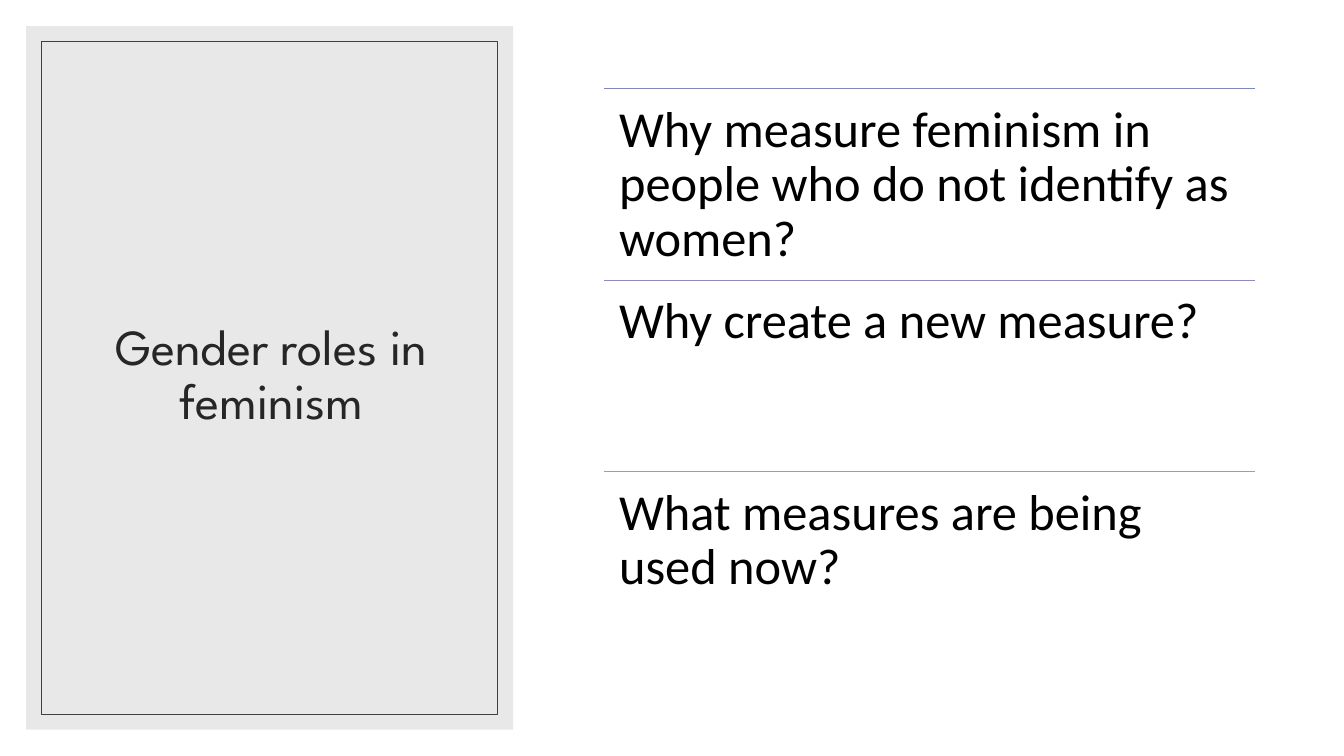
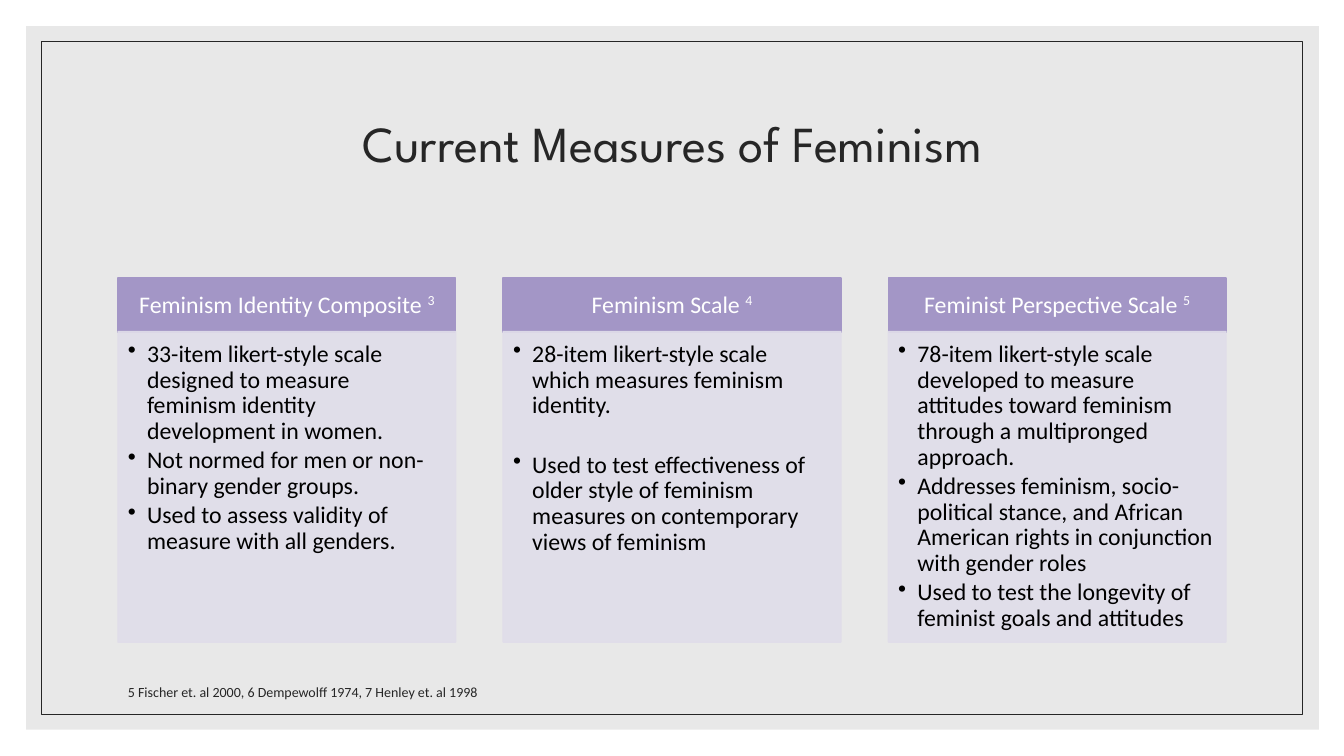
from dataclasses import dataclass

from lxml import etree
from pptx import Presentation
from pptx.dml.color import RGBColor
from pptx.enum.shapes import MSO_CONNECTOR, MSO_SHAPE
from pptx.enum.text import MSO_ANCHOR, MSO_AUTO_SIZE, PP_ALIGN
from pptx.oxml.ns import qn
from pptx.util import Inches, Pt

RECTANGLE = MSO_SHAPE.RECTANGLE
STRAIGHT = MSO_CONNECTOR.STRAIGHT
LEFT, CENTER = PP_ALIGN.LEFT, PP_ALIGN.CENTER
TOP, MIDDLE, BOTTOM = MSO_ANCHOR.TOP, MSO_ANCHOR.MIDDLE, MSO_ANCHOR.BOTTOM
NO_AUTOFIT = MSO_AUTO_SIZE.NONE
TITLE_ONLY = 5


@dataclass(frozen=True)
class Theme:
    heading_font: str = "League Spartan"
    body_font: str = "Calibri"
    ink: str = "262626"
    soft_ink: str = "404040"
    black: str = "000000"
    white: str = "FFFFFF"
    panel: str = "D9D9D9"
    accent: str = "A396C6"
    tint: str = "E0DDEA"
    rules: tuple = ("7F88BA", "8E8BC0", "A396C6")
    large: int = 36
    medium: int = 17
    small: int = 10


THEME = Theme()


def write_text(frame, paragraphs, *, size, color, font=THEME.body_font, align=LEFT,
               anchor=TOP, insets=(0.1, 0.05, 0.1, 0.05), spacing=0.9, before=0,
               after=0, bullet=None, superscript=None):
    frame.word_wrap = True
    frame.auto_size = NO_AUTOFIT
    frame.vertical_anchor = anchor
    (frame.margin_left, frame.margin_top,
     frame.margin_right, frame.margin_bottom) = map(Inches, insets)
    for index, text in enumerate(paragraphs):
        paragraph = frame.add_paragraph() if index else frame.paragraphs[0]
        paragraph.alignment = align
        paragraph.line_spacing = spacing
        paragraph.space_before = Pt(before if index else 0)
        paragraph.space_after = Pt(after)
        if bullet:
            properties = paragraph._p.get_or_add_pPr()
            properties.set("marL", str(Inches(0.19)))
            properties.set("indent", str(-Inches(0.19)))
            etree.SubElement(properties, qn("a:buChar"), char=bullet)
        for part in filter(None, (text, superscript)):
            run = paragraph.add_run()
            run.text = part
            run.font.name = font
            run.font.size = Pt(size)
            run.font.color.rgb = RGBColor.from_string(color)
        if superscript:
            run._r.get_or_add_rPr().set("baseline", "30000")


class Deck:
    """Holds the style and the current slide, and draws each kind of element."""

    def __init__(self, theme):
        self.theme = theme
        self.presentation = Presentation()
        self.presentation.slide_width = Inches(13.33)
        self.presentation.slide_height = Inches(7.5)
        self.slide = None

    def box(self, left, top, width, height, fill=None, line=None, weight=1, opacity=100):
        box = self.slide.shapes.add_shape(
            RECTANGLE, Inches(left), Inches(top), Inches(width), Inches(height))
        box.shadow.inherit = False
        if fill:
            box.fill.solid()
            box.fill.fore_color.rgb = RGBColor.from_string(fill)
        else:
            box.fill.background()
        if line:
            box.line.color.rgb = RGBColor.from_string(line)
            box.line.width = Pt(weight)
        else:
            box.line.fill.background()
        if opacity < 100:
            for color in box.element.spPr.iter(qn("a:srgbClr")):
                etree.SubElement(color, qn("a:alpha"), val=str(opacity * 1000))
        return box

    def text(self, left, top, width, height, paragraphs, **style):
        label = self.slide.shapes.add_textbox(
            Inches(left), Inches(top), Inches(width), Inches(height))
        write_text(label.text_frame, paragraphs, **style)

    def rule(self, left, top, width, color):
        rule = self.slide.shapes.add_connector(
            STRAIGHT, Inches(left), Inches(top), Inches(left + width), Inches(top))
        rule.line.color.rgb = RGBColor.from_string(color)
        rule.line.width = Pt(1)
        etree.SubElement(rule.element.spPr, qn("a:effectLst"))

    def new_slide(self, heading, heading_place, panel_width, frame_color):
        layout = self.presentation.slide_layouts[TITLE_ONLY]
        self.slide = self.presentation.slides.add_slide(layout)
        self.box(0.26, 0.26, panel_width, 6.98, fill=self.theme.panel, opacity=60)
        self.box(0.41, 0.41, panel_width - 0.31, 6.68, line=frame_color, weight=0.5)
        title = self.slide.shapes.title
        title.left, title.top, title.width, title.height = map(Inches, heading_place)
        write_text(title.text_frame, [heading], size=self.theme.large,
                   color=self.theme.ink, font=self.theme.heading_font,
                   align=CENTER, anchor=MIDDLE)
        title.element.getparent().append(title.element)

    def question(self, top, question, color):
        left, width = 5.99, 6.46
        self.rule(left, top, width, color)
        self.text(left, top, width, 1.9, [question], size=self.theme.large,
                  color=self.theme.black, insets=(0.15,) * 4)

    def card(self, left, heading, reference, points, gap=0):
        theme, width = self.theme, 3.35
        header = self.box(left, 2.76, width, 0.54, fill=theme.accent, line=theme.accent)
        write_text(header.text_frame, [heading], size=theme.medium, color=theme.white,
                   align=CENTER, anchor=MIDDLE, insets=(0.13, 0.08, 0.13, 0.08),
                   superscript=reference)
        details = self.box(left, 3.29, width, 3.08, fill=theme.tint, line=theme.tint,
                           opacity=90)
        write_text(details.text_frame, points, size=theme.medium, color=theme.black,
                   insets=(0.1, 0.1, 0.13, 0.15), before=gap, after=2.5, bullet="•")


QUESTIONS = (
    "Why measure feminism in people who do not identify as women?",
    "Why create a new measure?",
    "What measures are being used now?",
)

MEASURES = (
    ("Feminism Identity Composite ", "3", (
        "33-item likert-style scale designed to measure feminism identity "
        "development in women.",
        "Not normed for men or non-binary gender groups.",
        "Used to assess validity of measure with all genders."), 0),
    ("Feminism Scale ", "4", (
        "28-item likert-style scale which measures feminism identity.",
        "Used to test effectiveness of older style of feminism measures on "
        "contemporary views of feminism"), 21.5),
    ("Feminist Perspective Scale ", "5", (
        "78-item likert-style scale developed to measure attitudes toward "
        "feminism through a multipronged approach.",
        "Addresses feminism, socio-political stance, and African American rights "
        "in conjunction with gender roles",
        "Used to test the longevity of feminist goals and attitudes"), 0),
)


def main():
    deck = Deck(THEME)

    deck.new_slide("Gender roles in feminism", (0.63, 0.61, 4.12, 6.24), 4.83,
                   THEME.soft_ink)
    for row, (question, color) in enumerate(zip(QUESTIONS, THEME.rules)):
        deck.question(0.88 + 1.9 * row, question, color)

    deck.new_slide("Current Measures of Feminism", (1.17, 0.7, 11, 1.5), 12.82,
                   THEME.ink)
    for column, measure in enumerate(MEASURES):
        deck.card(1.17 + 3.82 * column, *measure)
    deck.text(1.17, 6.6, 6.36, 0.4,
              ["5 Fischer et. al 2000, 6 Dempewolff 1974, 7 Henley et. al 1998"],
              size=THEME.small, color=THEME.ink, anchor=BOTTOM, spacing=1.0, after=6)

    deck.presentation.save("out.pptx")


if __name__ == "__main__":
    main()
